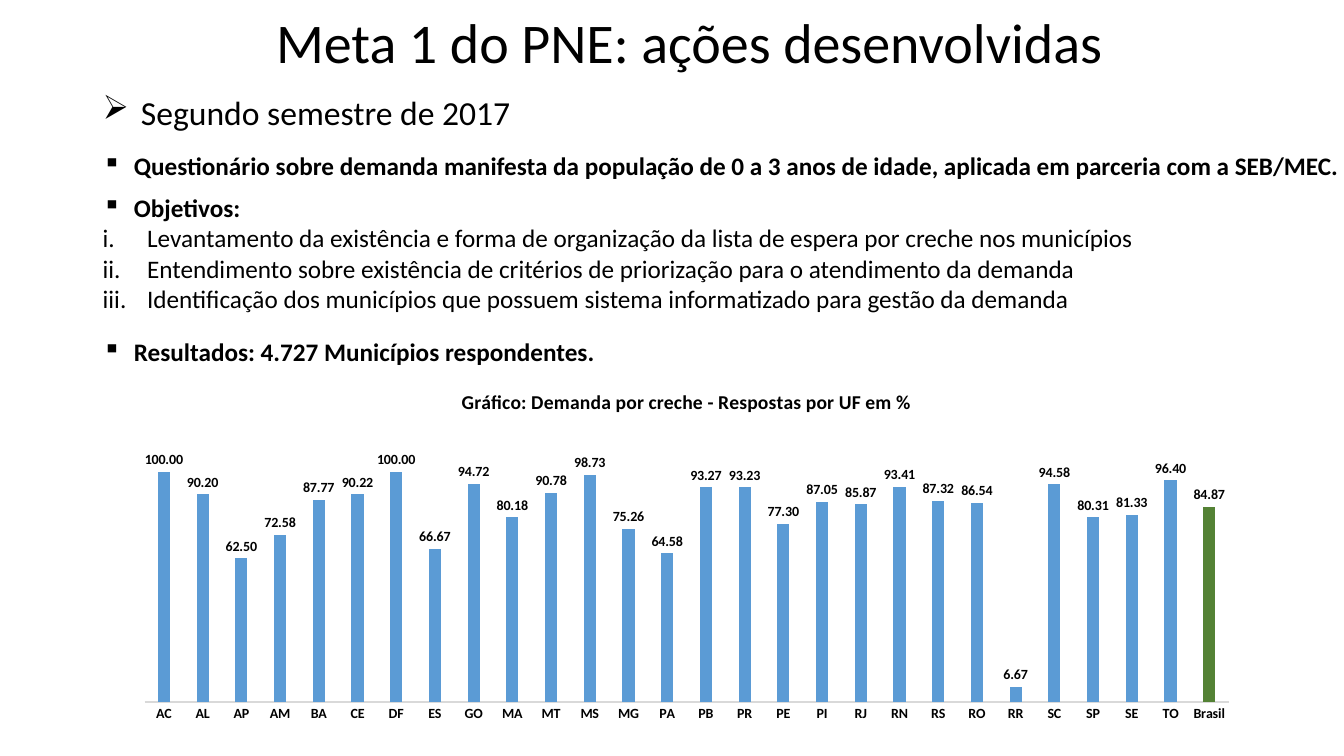
import pptx
import pptx.chart.data
import pptx.dml.color
import pptx.enum.chart
import pptx.enum.text
import pptx.oxml
import pptx.oxml.ns
import pptx.util
from pptx.util import Inches

FONT = "Calibri"
COLORS = {"text": "000000", "bar": "5B9BD5", "brazil": "548235", "axis": "D9D9D9"}
ALIGN = pptx.enum.text.PP_ALIGN
ARROW, SQUARE, ROMAN = "➢", "▪", "romanLcPeriod"
INDENTS = {ARROW: 0.38, SQUARE: 0.31, ROMAN: 0.44}

TITLE = "Meta 1 do PNE: ações desenvolvidas"
TEXT_LEFT = 0.92

# Text blocks: top, width, height, wrap, size, paragraphs (text, bullet, bold, alignment)
BLOCKS = [
    (0.86, 11.11, 0.5, True, 24, [("Segundo semestre de 2017", ARROW, False, ALIGN.LEFT)]),
    (1.44, 12.69, 0.4, True, 18, [
        ("Questionário sobre demanda manifesta da população de 0 a 3 anos de idade, "
         "aplicada em parceria com a SEB/MEC.", SQUARE, True, ALIGN.JUSTIFY)]),
    (1.86, 12.18, 1.31, True, 18, [
        ("Objetivos:", SQUARE, True, ALIGN.LEFT),
        ("Levantamento da existência e forma de organização da lista de espera por "
         "creche nos municípios", ROMAN, False, ALIGN.LEFT),
        ("Entendimento sobre existência de critérios de priorização para o "
         "atendimento da demanda", ROMAN, False, ALIGN.JUSTIFY),
        ("Identificação dos municípios que possuem sistema informatizado para "
         "gestão da demanda", ROMAN, False, ALIGN.LEFT)]),
    (3.29, 5.12, 0.4, False, 18, [
        ("Resultados: 4.727 Municípios respondentes.", SQUARE, True, ALIGN.LEFT)]),
]

CHART_TITLE = "Gráfico: Demanda por creche - Respostas por UF em %"
DEMAND = {
    "AC": 100, "AL": 90.2, "AP": 62.5, "AM": 72.58, "BA": 87.77, "CE": 90.22, "DF": 100,
    "ES": 66.67, "GO": 94.72, "MA": 80.18, "MT": 90.78, "MS": 98.73, "MG": 75.26,
    "PA": 64.58, "PB": 93.27, "PR": 93.23, "PE": 77.3, "PI": 87.05, "RJ": 85.87,
    "RN": 93.41, "RS": 87.32, "RO": 86.54, "RR": 6.67, "SC": 94.58, "SP": 80.31,
    "SE": 81.33, "TO": 96.4, "Brasil": 84.87,
}
PLOT_AREA = {"x": 0.02, "y": 0.15, "w": 0.96, "h": 0.77}


def rgb(name):
    return pptx.dml.color.RGBColor.from_string(COLORS[name])


def style_font(font, size, bold=False):
    font.name = FONT
    font.size = pptx.util.Pt(size)
    font.bold = bold
    font.color.rgb = rgb("text")


def set_bullet(paragraph, bullet):
    properties = paragraph._p.get_or_add_pPr()
    indent = Inches(INDENTS[bullet])
    properties.set("marL", str(indent))
    properties.set("indent", str(-indent))
    tag, attribute = ("a:buAutoNum", "type") if bullet == ROMAN else ("a:buChar", "char")
    mark = pptx.oxml.parse_xml(f"<{tag} {pptx.oxml.ns.nsdecls('a')} {attribute}=\"{bullet}\"/>")
    properties.append(mark)


def add_text(slide, left, top, width, height, wrap, size, paragraphs):
    box = slide.shapes.add_textbox(*map(Inches, (left, top, width, height)))
    frame = box.text_frame
    frame.word_wrap = wrap
    frame.text = "\n".join(item[0] for item in paragraphs)
    for paragraph, (_, bullet, bold, alignment) in zip(frame.paragraphs, paragraphs):
        paragraph.alignment = alignment
        style_font(paragraph.runs[0].font, size, bold)
        if bullet:
            set_bullet(paragraph, bullet)
    return frame


def add_demand_chart(slide):
    data = pptx.chart.data.CategoryChartData(number_format="0.00")
    data.categories = list(DEMAND)
    data.add_series("Demanda por creche", list(DEMAND.values()))
    chart = slide.shapes.add_chart(
        pptx.enum.chart.XL_CHART_TYPE.COLUMN_CLUSTERED,
        *map(Inches, (1.21, 3.69, 11.2, 3.56)), data).chart
    style_font(chart.font, 10)
    chart.has_legend = False

    # Chart title
    chart.has_title = True
    chart.chart_title.include_in_layout = False
    title_frame = chart.chart_title.text_frame
    title_frame.text = CHART_TITLE
    style_font(title_frame.paragraphs[0].runs[0].font, 14, True)

    # Axes
    states = chart.category_axis
    states.major_tick_mark = pptx.enum.chart.XL_TICK_MARK.NONE
    style_font(states.tick_labels.font, 10, True)
    states.format.line.color.rgb = rgb("axis")
    states.format.line.width = pptx.util.Pt(0.75)
    percent = chart.value_axis
    percent.visible = False
    percent.has_major_gridlines = False
    percent.minimum_scale, percent.maximum_scale = 0, 120

    # Columns and labels
    plot = chart.plots[0]
    plot.gap_width, plot.overlap = 219, -27
    plot.vary_by_categories = False
    series = plot.series[0]
    brazil = series.points[list(DEMAND).index("Brasil")]
    for part, color in ((series, "bar"), (brazil, "brazil")):
        part.format.fill.solid()
        part.format.fill.fore_color.rgb = rgb(color)
    labels = series.data_labels
    labels.show_value = True
    labels.number_format = "0.00"
    labels.number_format_is_linked = False
    labels.position = pptx.enum.chart.XL_LABEL_POSITION.OUTSIDE_END
    style_font(labels.font, 10, True)

    # Fixed plot area
    plot_area = chart._chartSpace.chart.plotArea
    for layout in plot_area.findall(pptx.oxml.ns.qn("c:layout")):
        plot_area.remove(layout)
    modes = '<c:xMode val="edge"/><c:yMode val="edge"/>'
    sizes = "".join(f'<c:{key} val="{value}"/>' for key, value in PLOT_AREA.items())
    plot_area.insert(0, pptx.oxml.parse_xml(
        f"<c:layout {pptx.oxml.ns.nsdecls('c')}><c:manualLayout>"
        f'<c:layoutTarget val="inner"/>{modes}{sizes}</c:manualLayout></c:layout>'))


def main():
    presentation = pptx.Presentation()
    presentation.slide_width, presentation.slide_height = Inches(13.33), Inches(7.5)
    slide = presentation.slides.add_slide(presentation.slide_layouts[6])

    # Title
    title = add_text(slide, 2.64, -0.28, 11.5, 1.45, True, 40,
                     [(TITLE, None, False, ALIGN.LEFT)])
    title.vertical_anchor = pptx.enum.text.MSO_ANCHOR.MIDDLE
    title.paragraphs[0].line_spacing = 0.9

    # Body text and chart
    for top, width, height, wrap, size, paragraphs in BLOCKS:
        add_text(slide, TEXT_LEFT, top, width, height, wrap, size, paragraphs)
    add_demand_chart(slide)
    presentation.save("out.pptx")


if __name__ == "__main__":
    main()
